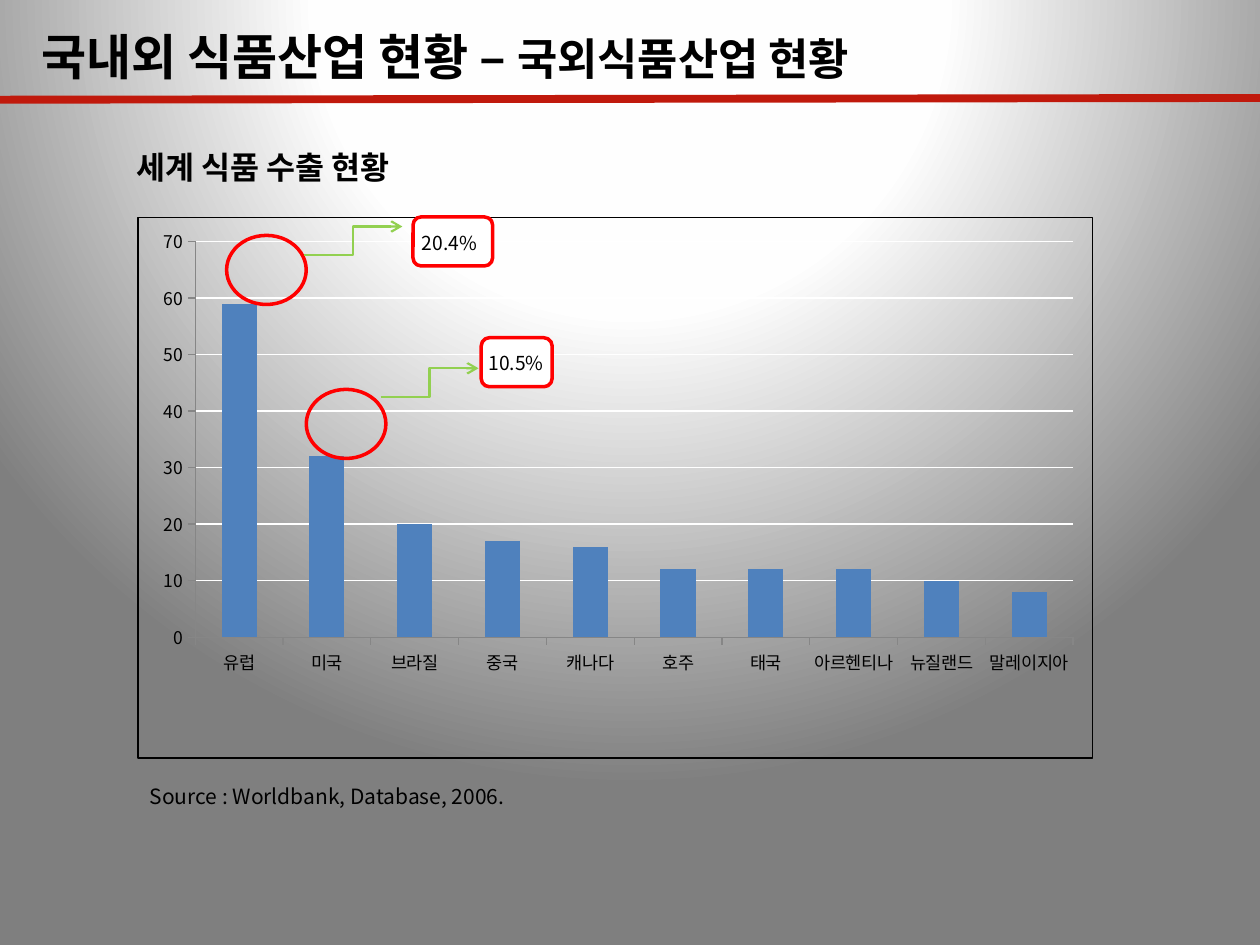
from dataclasses import dataclass

from lxml.etree import SubElement
from pptx import Presentation
from pptx.chart.data import CategoryChartData
from pptx.dml.color import RGBColor as RGB
from pptx.enum.chart import XL_CHART_TYPE as CHART, XL_TICK_MARK as TICK
from pptx.enum.shapes import MSO_CONNECTOR as CONN, MSO_SHAPE as SHAPE
from pptx.enum.text import MSO_ANCHOR as ANCHOR
from pptx.oxml import parse_xml
from pptx.oxml.ns import nsdecls, qn
from pptx.util import Pt


@dataclass(frozen=True)
class Theme:
    """Colours, font and type sizes of the slide."""
    font: str = "Noto Sans CJK KR"
    ink: str = "000000"
    white: str = "FFFFFF"
    rule: str = "C0190C"
    mark: str = "FF0000"
    arrow: str = "92D050"
    bar: str = "4F81BD"
    axis: str = "868686"
    backdrop: tuple = ((0, "FFFFFF"), (40, "FEFEFE"), (100, "7F7F7F"))
    title: float = 28
    subtitle: float = 25
    heading: float = 18
    source: float = 12
    callout: float = 11
    label: float = 10


def add_text(tf, text, size, color, font, bold=False):
    """Append a formatted run to the first paragraph."""
    r = tf.paragraphs[0].add_run()
    r.text = text
    r.font.size, r.font.bold, r.font.name = Pt(size), bold, font
    r.font.color.rgb = RGB.from_string(color)
    SubElement(r.font._element, qn("a:ea"), typeface=font)


class SlideBuilder:
    """Draws themed elements on the current slide."""

    def __init__(self, slide, theme):
        """Keep the slide and its theme."""
        self.s, self.t = slide, theme

    def background(self):
        """Fill the slide with a radial gradient centred above it."""
        stops = "".join(f'<a:gs pos="{pos * 1000}"><a:srgbClr val="{c}"/></a:gs>'
                        for pos, c in self.t.backdrop)
        self.s.background.fill.gradient()
        old = self.s._element.cSld.bg.bgPr.find(qn("a:gradFill"))
        old.getparent().replace(old, parse_xml(
            f'<a:gradFill {nsdecls("a")} rotWithShape="1"><a:gsLst>{stops}</a:gsLst>'
            '<a:path path="circle"><a:fillToRect l="50000" t="-80000" r="50000" b="180000"/>'
            '</a:path></a:gradFill>'))

    def text(self, box, *runs, bold=False):
        """Add a text box holding (text, size) runs."""
        tf = self.s.shapes.add_textbox(*map(Pt, box)).text_frame
        tf.word_wrap, tf.vertical_anchor = True, ANCHOR.MIDDLE
        for text, size in runs:
            add_text(tf, text, size, self.t.ink, self.t.font, bold=bold)

    def shape(self, kind, box, fill=None):
        """Add a red outlined shape."""
        sp = self.s.shapes.add_shape(kind, *map(Pt, box))
        sp.shadow.inherit = False
        if fill:
            sp.fill.solid()
            sp.fill.fore_color.rgb = RGB.from_string(fill)
        else:
            sp.fill.background()
        sp.line.color.rgb = RGB.from_string(self.t.mark)
        sp.line.width = Pt(2)

    def line(self, kind, ends, color, width, arrow=False):
        """Add a connector, with an open arrowhead if asked."""
        cx = self.s.shapes.add_connector(kind, *map(Pt, ends))
        cx.line.color.rgb = RGB.from_string(color)
        cx.line.width = Pt(width)
        if arrow:
            SubElement(cx.line._get_or_add_ln(), qn("a:tailEnd"), type="arrow")
        SubElement(cx._element.spPr, qn("a:effectLst"))

    def callout(self, box, text_left, text):
        """Add a rounded box with its percentage."""
        self.shape(SHAPE.ROUNDED_RECTANGLE, box, fill=self.t.white)
        self.text((text_left, box[1] + 4, 56, 21), (text, self.t.callout))

    def chart(self, box, values):
        """Add the framed column chart."""
        t = self.t
        data = CategoryChartData()
        data.categories = list(values)
        data.add_series("Series 1", list(values.values()))
        ch = self.s.shapes.add_chart(CHART.COLUMN_CLUSTERED, *map(Pt, box), data).chart
        ch.has_legend = ch.has_title = False
        ch.font.size, ch.font.name = Pt(t.label), t.font
        ch.font.color.rgb = RGB.from_string(t.ink)
        SubElement(ch.font._element, qn("a:ea"), typeface=t.font)
        plot = ch.plots[0]
        plot.gap_width, plot.vary_by_categories = 150, False
        fill = plot.series[0].format.fill
        fill.solid()
        fill.fore_color.rgb = RGB.from_string(t.bar)
        for axis in (ch.category_axis, ch.value_axis):
            axis.major_tick_mark, axis.minor_tick_mark = TICK.OUTSIDE, TICK.NONE
            axis.format.line.color.rgb = RGB.from_string(t.axis)
        va = ch.value_axis
        va.minimum_scale, va.maximum_scale, va.major_unit = 0, 70, 10
        grid = va.major_gridlines.format.line
        grid.color.rgb, grid.width = RGB.from_string(t.white), Pt(0.75)
        self.frame_chart(ch._chartSpace)

    def frame_chart(self, space):
        """Set the inner plot area and the chart border."""
        area = space.chart.plotArea
        for old in area.findall(qn("c:layout")):
            area.remove(old)
        sizes = "".join(f'<c:{k} val="{v}"/>' for k, v in
                        dict(x=0.06, y=0.044, w=0.92, h=0.733).items())
        area.insert(0, parse_xml(
            f'<c:layout {nsdecls("c")}><c:manualLayout><c:layoutTarget val="inner"/>'
            f'<c:xMode val="edge"/><c:yMode val="edge"/>{sizes}'
            '</c:manualLayout></c:layout>'))
        space.chart.addnext(parse_xml(
            f'<c:spPr {nsdecls("c", "a")}><a:noFill/><a:ln w="{Pt(0.75)}"><a:solidFill>'
            f'<a:srgbClr val="{self.t.ink}"/></a:solidFill></a:ln></c:spPr>'))


def main():
    """Build the slide on world food exports."""
    prs = Presentation()
    prs.slide_width, prs.slide_height = Pt(720), Pt(540)
    t = Theme()
    b = SlideBuilder(prs.slides.add_slide(prs.slide_layouts[6]), t)
    b.background()
    b.line(CONN.STRAIGHT, (0, 57, 720, 56), t.rule, 4.5)
    b.text((16.5, 11.5, 658, 41), ("국내외 식품산업 현황 – ", t.title),
           ("국외식품산업 현황", t.subtitle), bold=True)
    b.text((71, 77.5, 630, 36), ("세계 식품 수출 현황", t.heading), bold=True)
    b.chart((78.5, 124, 546, 309.5), {
        "유럽": 59, "미국": 32, "브라질": 20, "중국": 17, "캐나다": 16,
        "호주": 12, "태국": 12, "아르헨티나": 12, "뉴질랜드": 10, "말레이지아": 8})
    for left, top in ((129.5, 134.5), (175, 222.5)):
        b.shape(SHAPE.OVAL, (left, top, 45.5, 39.5))
    b.text((78.5, 444, 225.5, 22), ("Source : Worldbank, Database, 2006.", t.source))
    for (x, y), box, text_left, text in (
            ((174, 146), (236, 124, 45.5, 28), 234, "20.4%"),
            ((217.5, 227), (275, 193, 40.5, 28), 272, "10.5%")):
        b.line(CONN.ELBOW, (x, y, x + 56, y - 16.5), t.arrow, 1.25, arrow=True)
        b.callout(box, text_left, text)
    prs.save("out.pptx")


if __name__ == "__main__":
    main()
